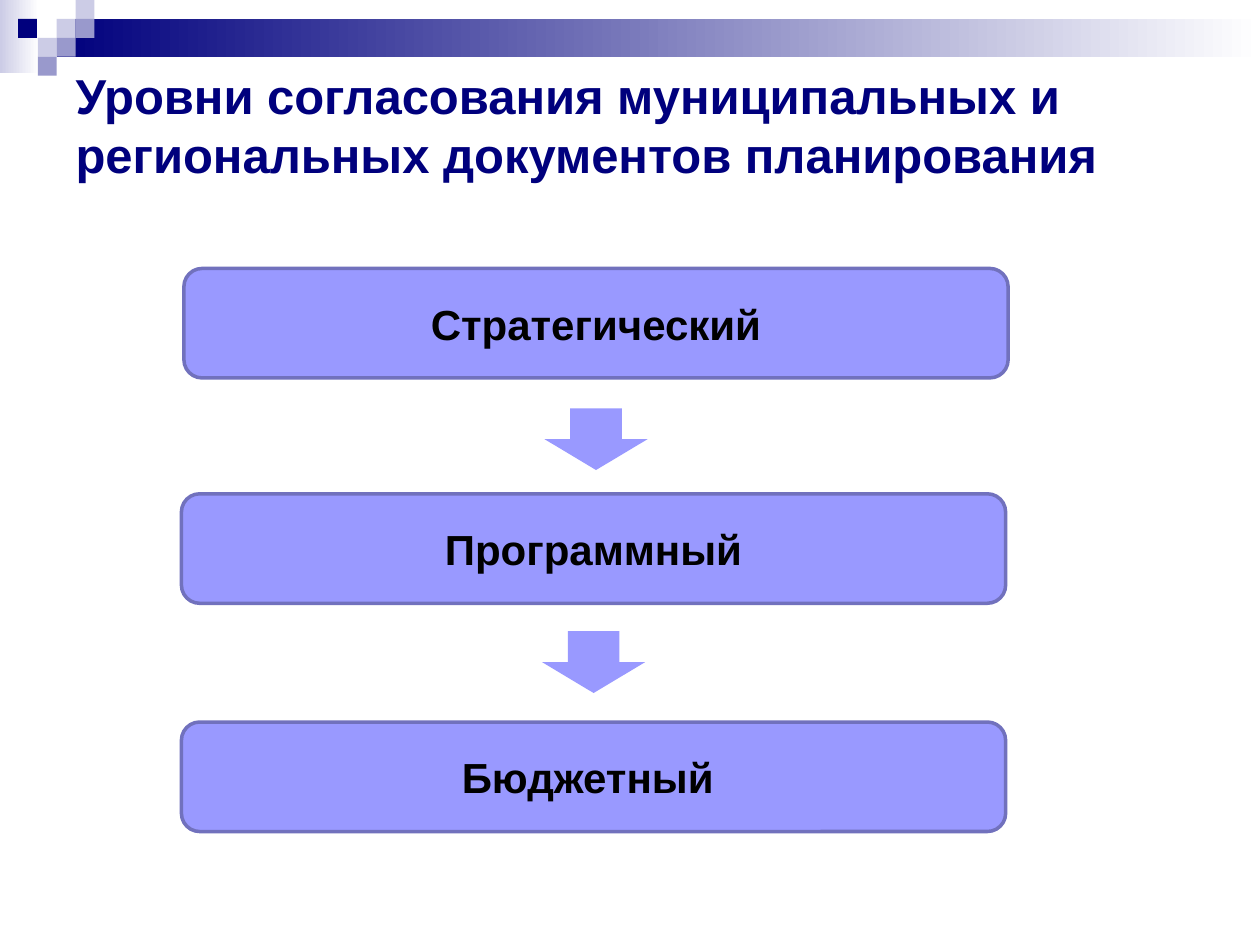
from pptx import Presentation
from pptx import util as u
from pptx.dml.color import RGBColor
from pptx.enum import shapes, text

NAVY = RGBColor(0x00, 0x00, 0x7D)
PALE = RGBColor(0xCC, 0xCC, 0xE6)
MID = RGBColor(0x99, 0x99, 0xCC)
LILAC = RGBColor(0x99, 0x99, 0xFF)
OUTLINE = RGBColor(0x71, 0x71, 0xBD)
WHITE = RGBColor(0xFF, 0xFF, 0xFF)
BLACK = RGBColor(0x00, 0x00, 0x00)

SQUARE = 10.8
# left, top, colour
SQUARES = [
    (32.4, 10.8, PALE), (43.2, 0, PALE), (43.2, 10.8, MID),
    (21.6, 21.6, PALE), (10.3, 10.8, NAVY), (32.4, 21.6, MID),
    (21.6, 32.4, MID),
]
BOX_WIDTH, BOX_HEIGHT = 471, 62.6
ARROW_WIDTH, ARROW_HEIGHT = 59, 35.3
# label, left, top
LEVELS = [
    ("Стратегический", 105.1, 153.4),
    ("Программный", 103.7, 282.2),
    ("Бюджетный ", 103.7, 412.6),
]
ARROW_TOPS = [233.3, 360.7]


class SlideBuilder:
    """Holds the style and the current slide; all lengths are in points."""

    font_name = "Arial"

    def __init__(self, slide):
        self.slide = slide

    def style_font(self, paragraph, size, color):
        font = paragraph.font
        font.name, font.size, font.bold = self.font_name, u.Pt(size), True
        font.color.rgb = color

    def title(self, wording, left, top, width, height):
        shape = self.slide.shapes.title
        shape.left, shape.top = u.Pt(left), u.Pt(top)
        shape.width, shape.height = u.Pt(width), u.Pt(height)
        frame = shape.text_frame
        frame.text = wording
        frame.word_wrap = True
        frame.auto_size = text.MSO_AUTO_SIZE.NONE
        frame.vertical_anchor = text.MSO_ANCHOR.MIDDLE
        paragraph = frame.paragraphs[0]
        paragraph.alignment = text.PP_ALIGN.LEFT
        self.style_font(paragraph, 28, NAVY)

    def shape(self, kind, left, top, width, height, color):
        shape = self.slide.shapes.add_shape(
            kind, u.Pt(left), u.Pt(top), u.Pt(width), u.Pt(height))
        shape.shadow.inherit = False
        shape.fill.solid()
        shape.fill.fore_color.rgb = color
        shape.line.fill.background()
        return shape

    def rectangle(self, left, top, width, height, color):
        return self.shape(shapes.MSO_SHAPE.RECTANGLE, left, top, width, height, color)

    def fading_band(self, left, top, width, height, color):
        """Draw a rectangle that fades to white from left to right."""
        fill = self.rectangle(left, top, width, height, color).fill
        fill.gradient()
        fill.gradient_angle = 0
        for stop, stop_color in zip(fill.gradient_stops, (color, WHITE)):
            stop.color.rgb = stop_color

    def level_box(self, label, left, top):
        shape = self.shape(shapes.MSO_SHAPE.ROUNDED_RECTANGLE,
                           left, top, BOX_WIDTH, BOX_HEIGHT, LILAC)
        shape.line.color.rgb = OUTLINE
        shape.line.width = u.Pt(2)
        frame = shape.text_frame
        frame.text = label
        frame.vertical_anchor = text.MSO_ANCHOR.MIDDLE
        paragraph = frame.paragraphs[0]
        paragraph.alignment = text.PP_ALIGN.CENTER
        self.style_font(paragraph, 24, BLACK)

    def down_arrow(self, center, top):
        self.shape(shapes.MSO_SHAPE.DOWN_ARROW, center - ARROW_WIDTH / 2, top,
                   ARROW_WIDTH, ARROW_HEIGHT, LILAC)


def main():
    presentation = Presentation()
    presentation.slide_width, presentation.slide_height = u.Pt(720), u.Pt(540)
    builder = SlideBuilder(presentation.slides.add_slide(presentation.slide_layouts[5]))

    builder.fading_band(0, 0, 22.3, 41.8, PALE)
    builder.fading_band(32.4, 10.8, 687.6, 21.6, NAVY)
    for left, top, color in SQUARES:
        builder.rectangle(left, top, SQUARE, SQUARE, color)

    builder.title("Уровни согласования муниципальных и региональных документов планирования",
                  36, 36, 648, 69.8)

    for label, left, top in LEVELS:
        builder.level_box(label, left, top)
    for (_, left, _), top in zip(LEVELS, ARROW_TOPS):
        builder.down_arrow(left + BOX_WIDTH / 2, top)

    presentation.save("out.pptx")


if __name__ == "__main__":
    main()
